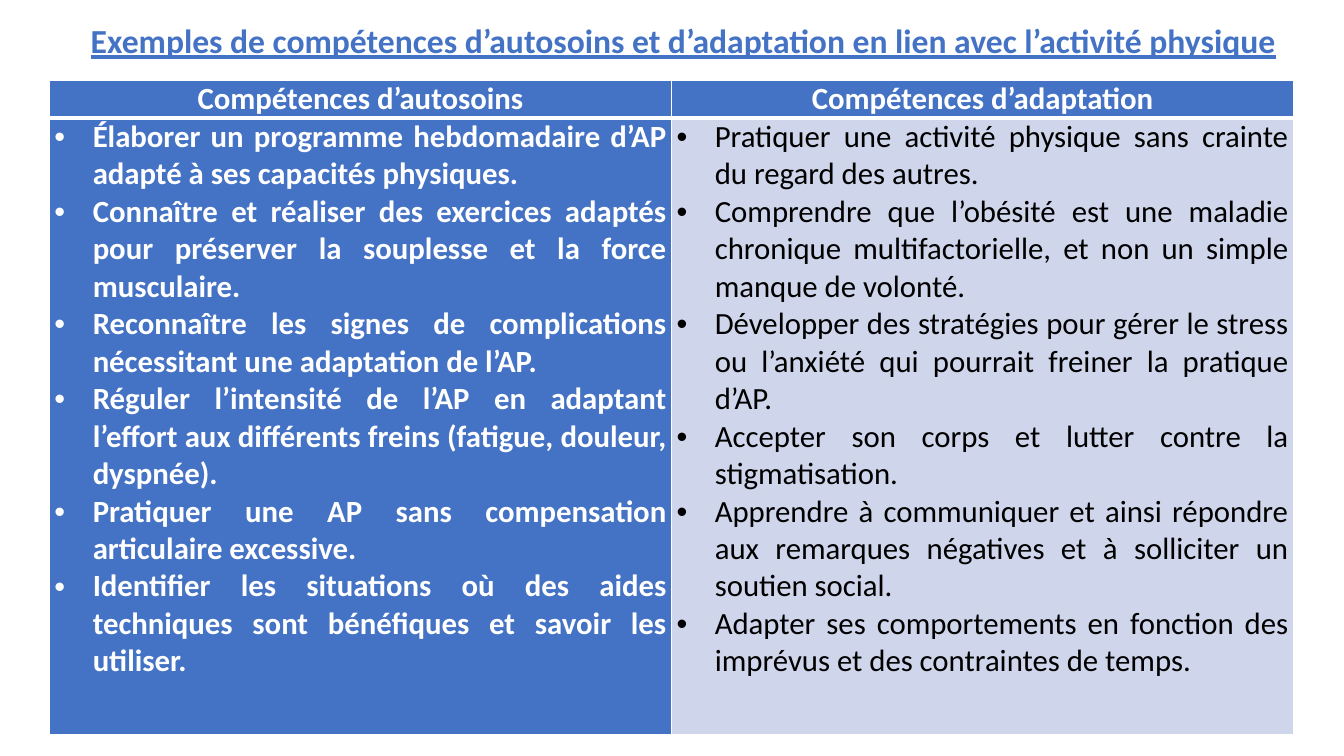
from lxml import etree
from pptx import Presentation
from pptx.dml.color import RGBColor
from pptx.enum import text as t
from pptx.oxml import ns
from pptx.util import Inches, Pt

BLUE, PALE, WHITE, BLACK = "4472C4", "CFD5EA", "FFFFFF", "000000"
TITLE = "Exemples de compétences d’autosoins et d’adaptation en lien avec l’activité physique"
SELF_CARE = [
    "Élaborer un programme hebdomadaire d’AP adapté à ses capacités physiques.",
    "Connaître et réaliser des exercices adaptés pour préserver la souplesse et la force musculaire.",
    "Reconnaître les signes de complications nécessitant une adaptation de l’AP.",
    "Réguler l’intensité de l’AP en adaptant l’effort aux différents freins (fatigue, douleur, dyspnée).",
    "Pratiquer une AP sans compensation articulaire excessive.",
    "Identifier les situations où des aides techniques sont bénéfiques et savoir les utiliser.",
]
ADAPTATION = [
    "Pratiquer une activité physique sans crainte du regard des autres.",
    "Comprendre que l’obésité est une maladie chronique multifactorielle, et non un simple manque de volonté.",
    "Développer des stratégies pour gérer le stress ou l’anxiété qui pourrait freiner la pratique d’AP.",
    "Accepter son corps et lutter contre la stigmatisation.",
    "Apprendre à communiquer et ainsi répondre aux remarques négatives et à solliciter un soutien social.",
    "Adapter ses comportements en fonction des imprévus et des contraintes de temps.",
]


def rgb(color):
    """Turn a hex string into a colour."""
    return RGBColor.from_string(color)


def format_text(paragraph, size, color, bold, align):
    """Align a paragraph and format its runs."""
    paragraph.alignment = align
    for run in paragraph.runs:
        run.font.name = "Calibri"
        run.font.size = Pt(size)
        run.font.bold = bold
        run.font.color.rgb = rgb(color)


def add_bullet(paragraph):
    """Give a paragraph a hanging round bullet."""
    properties = paragraph._p.get_or_add_pPr()
    properties.set("marL", str(Inches(0.38)))
    properties.set("indent", str(-Inches(0.38)))
    font = etree.SubElement(properties, ns.qn("a:buFont"))
    font.set("typeface", "Arial")
    etree.SubElement(properties, ns.qn("a:buChar")).set("char", "•")


def add_borders(cell, widths):
    """Draw white cell borders with a width in points for each side."""
    properties = cell._tc.get_or_add_tcPr()
    for side, width in widths.items():
        line = etree.SubElement(properties, ns.qn(f"a:ln{side}"), w=str(Pt(width)))
        fill = etree.SubElement(line, ns.qn("a:solidFill"))
        etree.SubElement(fill, ns.qn("a:srgbClr"), val=WHITE)


def fill_cell(cell, lines, fill, color, bold, bulleted):
    """Write one table cell as a centred heading or a justified list."""
    cell.margin_left = cell.margin_right = Inches(0.05)
    cell.margin_top = cell.margin_bottom = 0
    heading_edge = 1 if bulleted else 3
    top_edge = 3 if bulleted else 1
    add_borders(cell, {"L": 1, "R": 1, "T": top_edge, "B": heading_edge})
    cell.fill.solid()
    cell.fill.fore_color.rgb = rgb(fill)
    cell.text_frame.text = "\n".join(lines)
    align = t.PP_ALIGN.JUSTIFY if bulleted else t.PP_ALIGN.CENTER
    for paragraph in cell.text_frame.paragraphs:
        format_text(paragraph, 22, color, bold, align)
        if bulleted:
            add_bullet(paragraph)


def set_title(slide):
    """Place and format the slide title."""
    title = slide.shapes.title
    title.left, title.top = Inches(0.8), Inches(-0.3)
    title.width, title.height = Inches(12.2), Inches(1.45)
    frame = title.text_frame
    frame.text = TITLE
    frame.word_wrap = True
    frame.auto_size = t.MSO_AUTO_SIZE.NONE
    frame.vertical_anchor = t.MSO_ANCHOR.MIDDLE
    heading = frame.paragraphs[0]
    heading.line_spacing = 0.9
    format_text(heading, 24, BLUE, True, t.PP_ALIGN.LEFT)
    heading.runs[0].font.underline = True


def add_skills_table(slide):
    """Add the two-column table of skills."""
    skills = slide.shapes.add_table(
        2, 2, Inches(0.49), Inches(0.8), Inches(12.34), Inches(6.48)).table
    skills.rows[0].height, skills.rows[1].height = Inches(0.36), Inches(6.12)
    columns = [
        ("Compétences d’autosoins", SELF_CARE, BLUE, WHITE, True),
        ("Compétences d’adaptation", ADAPTATION, PALE, BLACK, False),
    ]
    for index, (heading, examples, fill, color, bold) in enumerate(columns):
        skills.columns[index].width = Inches(6.17)
        fill_cell(skills.cell(0, index), [heading], BLUE, WHITE, True, False)
        fill_cell(skills.cell(1, index), examples, fill, color, bold, True)


def main():
    """Build and save the slide."""
    deck = Presentation()
    deck.slide_width, deck.slide_height = Inches(13.33), Inches(7.5)
    slide = deck.slides.add_slide(deck.slide_layouts[5])
    set_title(slide)
    add_skills_table(slide)
    deck.save("out.pptx")


if __name__ == "__main__":
    main()
